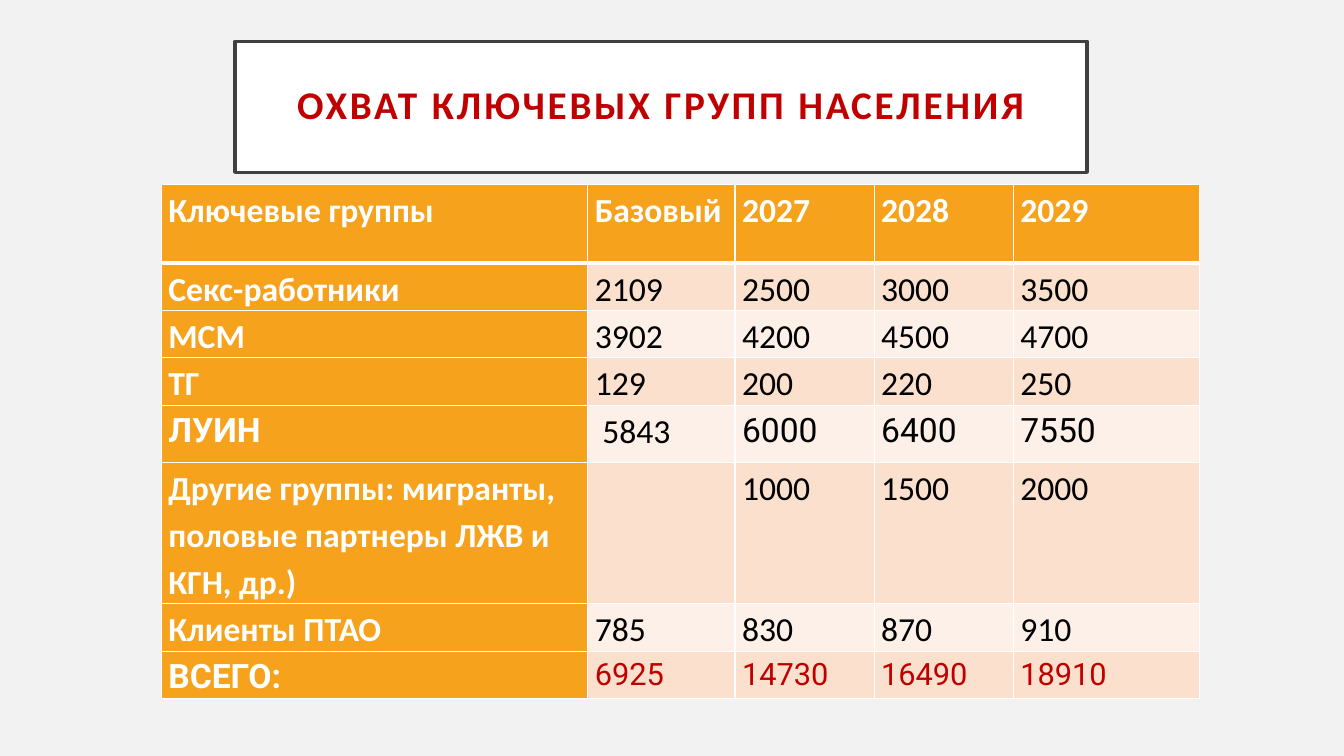
from pptx import Presentation
from pptx.dml.color import RGBColor
from pptx.enum.text import MSO_ANCHOR, MSO_AUTO_SIZE, PP_ALIGN
from pptx.oxml import parse_xml
from pptx.oxml.ns import nsdecls
from pptx.util import Inches, Pt

BACKGROUND = RGBColor(0xF2, 0xF2, 0xF2)
WHITE = RGBColor(0xFF, 0xFF, 0xFF)
BLACK = RGBColor(0, 0, 0)
RED = RGBColor(0xC0, 0, 0)
FRAME = RGBColor(0x40, 0x40, 0x40)
ORANGE = RGBColor(0xF6, 0xA2, 0x1D)
PEACH = RGBColor(0xFB, 0xE0, 0xCD)
CREAM = RGBColor(0xFD, 0xF0, 0xE8)

COVERAGE = [
    ["Ключевые группы", "Базовый", "2027", "2028", "2029"],
    ["Секс-работники", "2109", "2500", "3000", "3500"],
    ["МСМ", "3902", "4200", "4500", "4700"],
    ["ТГ", "129", "200", "220", "250"],
    ["ЛУИН", " 5843", "6000", "6400", "7550"],
    ["Другие группы: мигранты, половые партнеры ЛЖВ и КГН, др.)", "", "1000", "1500", "2000"],
    ["Клиенты ПТАО", "785", "830", "870", "910"],
    ["ВСЕГО:", "6925", "14730", "16490", "18910"],
]
COLUMN_WIDTHS = [4.23, 1.46, 1.38, 1.38, 1.85]
ROW_HEIGHTS = [0.78, 0.47, 0.47, 0.47, 0.57, 1.4, 0.47, 0.47]
DRUG_USERS_ROW, TOTAL_ROW = 4, 7


def apply(target, values):
    for attribute, value in values.items():
        setattr(target, attribute, value)


def write(paragraph, text, color, **font):
    run = paragraph.add_run()
    run.text = text
    apply(run.font, font)
    run.font.color.rgb = color
    return run


presentation = Presentation()
apply(presentation, {"slide_width": Inches(13.33), "slide_height": Inches(7.5)})
slide = presentation.slides.add_slide(presentation.slide_layouts[5])
slide.background.fill.solid()
slide.background.fill.fore_color.rgb = BACKGROUND

heading = slide.shapes.title
apply(heading, {"left": Inches(2.33), "top": Inches(0.41),
                "width": Inches(8.45), "height": Inches(1.3)})
heading.fill.solid()
heading.fill.fore_color.rgb = WHITE
heading.line.color.rgb = FRAME
heading.line.width = Pt(2.5)
apply(heading.text_frame, {
    "word_wrap": True, "auto_size": MSO_AUTO_SIZE.NONE, "vertical_anchor": MSO_ANCHOR.MIDDLE,
    "margin_left": Inches(0.2), "margin_right": Inches(0.2),
    "margin_top": Inches(0.2), "margin_bottom": Inches(0.2)})
heading_line = heading.text_frame.paragraphs[0]
apply(heading_line, {"alignment": PP_ALIGN.CENTER, "line_spacing": 0.9})
heading_run = write(heading_line, "ОХВАТ КЛЮЧЕВЫХ ГРУПП НАСЕЛЕНИЯ", RED,
                    name="Calibri", size=Pt(28), bold=True)
heading_run.font._element.set("spc", "200")

coverage_table = slide.shapes.add_table(
    len(ROW_HEIGHTS), len(COLUMN_WIDTHS), Inches(1.6), Inches(1.83),
    Inches(sum(COLUMN_WIDTHS)), Inches(sum(ROW_HEIGHTS))).table
for column, width in zip(coverage_table.columns, COLUMN_WIDTHS):
    column.width = Inches(width)
for row, height in zip(coverage_table.rows, ROW_HEIGHTS):
    row.height = Inches(height)

for r, values in enumerate(COVERAGE):
    for c, text in enumerate(values):
        cell = coverage_table.cell(r, c)
        is_label = r == 0 or c == 0
        apply(cell, {"margin_left": Inches(0.07), "margin_right": Inches(0.07),
                     "margin_top": 0, "margin_bottom": 0})
        for side in "LRTB":
            under_header = (r, side) in [(0, "B"), (1, "T")]
            cell._tc.get_or_add_tcPr().append(parse_xml(
                f'<a:ln{side} {nsdecls("a")} w="{Pt(3 if under_header else 1)}">'
                f'<a:solidFill><a:srgbClr val="{WHITE}"/></a:solidFill></a:ln{side}>'))
        cell.fill.solid()
        cell.fill.fore_color.rgb = ORANGE if is_label else PEACH if r % 2 else CREAM
        if not text:
            continue
        paragraph = cell.text_frame.paragraphs[0]
        apply(paragraph, {"line_spacing": 1.15, "space_after": Pt(8)})
        is_total = r == TOTAL_ROW and c > 0
        is_roboto = r == TOTAL_ROW or (r == DRUG_USERS_ROW and c != 1)
        write(paragraph, text, WHITE if is_label else RED if is_total else BLACK,
              name="Roboto" if is_roboto else "Calibri",
              size=Pt(22 if is_total else 24), bold=is_label)

presentation.save("out.pptx")
